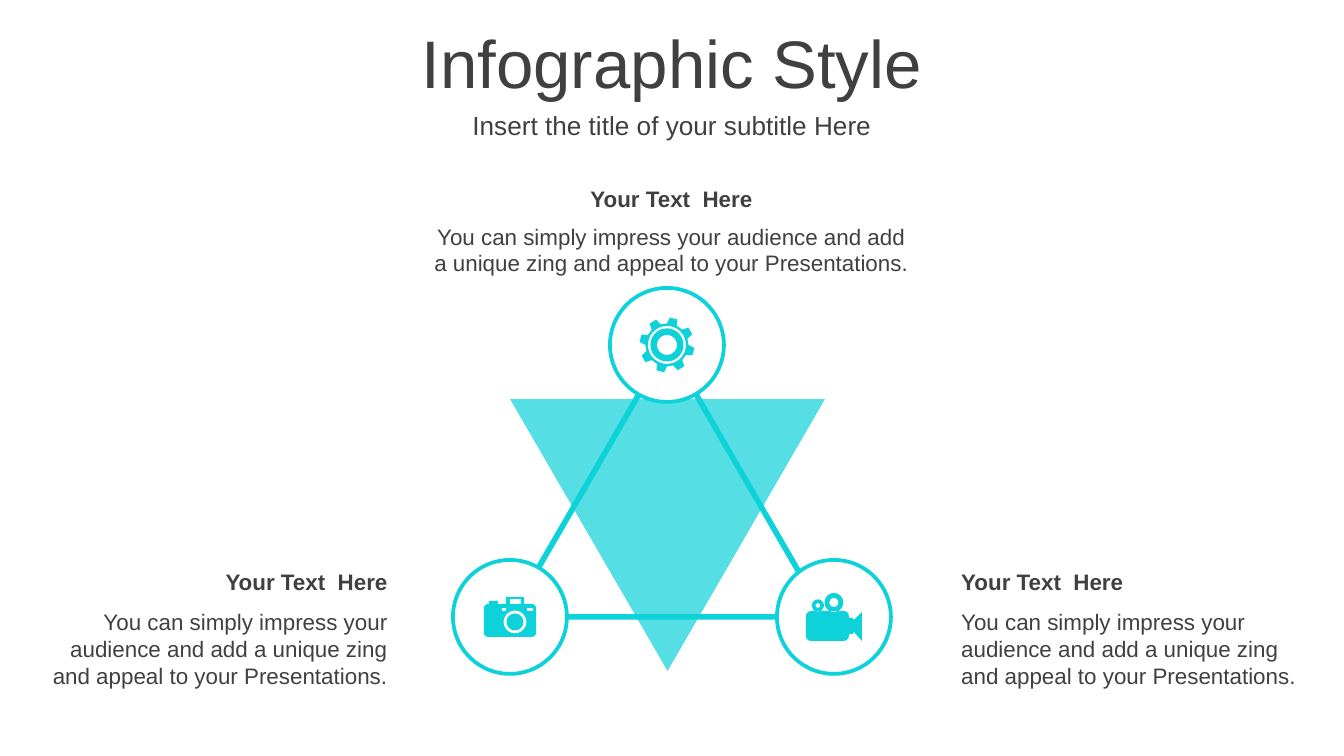
from math import cos, radians, sin

from lxml import etree
from pptx import Presentation
from pptx import util as u
from pptx.dml.color import RGBColor
from pptx.enum import shapes, text
from pptx.oxml.ns import qn

PX = u.Inches(10) / 1344
CYAN = RGBColor(0x0D, 0xD2, 0xD9)
WHITE = RGBColor(0xFF, 0xFF, 0xFF)
GREY = RGBColor(0x40, 0x40, 0x40)

HEADING = "Your Text  Here"
BODY = ("You can simply impress your audience and add a unique zing "
        "and appeal to your Presentations.")
NODE_RADIUS = 57
GEAR, CAMERA, VIDEO = (667, 345), (510, 617), (834, 617)


def px(value):
    return u.Emu(round(value * PX))


def add_text(slide, content, box, size=12, bold=False, align=text.PP_ALIGN.CENTER):
    frame = slide.shapes.add_textbox(*map(px, box)).text_frame
    frame.word_wrap = True
    frame.vertical_anchor = text.MSO_ANCHOR.MIDDLE
    paragraph = frame.paragraphs[0]
    paragraph.alignment = align
    run = paragraph.add_run()
    run.text = content
    run.font.name = "Arial"
    run.font.size = u.Pt(size)
    run.font.bold = bold
    run.font.color.rgb = GREY


def paint(shape, fill=None, line_width=0):
    shape.shadow.inherit = False
    if fill is None:
        shape.fill.background()
    else:
        shape.fill.solid()
        shape.fill.fore_color.rgb = fill
    if line_width:
        shape.line.color.rgb = CYAN
        shape.line.width = u.Pt(line_width)
    else:
        shape.line.fill.background()


def add_preset(slide, kind, box, **style):
    shape = slide.shapes.add_shape(kind, *map(px, box))
    paint(shape, **style)
    return shape


def set_opacity(shape, percent):
    color = shape.fill._xPr.find(qn("a:solidFill"))[0]
    etree.SubElement(color, qn("a:alpha"), val=str(percent * 1000))


def add_icon(slide, center, contours):
    """Draw contours given relative to the center; inner ones cut holes."""
    placed = [[(px(center[0] + x), px(center[1] + y)) for x, y in contour]
              for contour in contours]
    builder = slide.shapes.build_freeform(*placed[0][0])
    for index, contour in enumerate(placed):
        if index:
            builder.move_to(*contour[0])
        builder.add_line_segments(contour[1:], close=True)
    paint(builder.convert_to_shape(), fill=CYAN)


# Contours for the icons
def polar(x, y, radius, angle):
    return x + radius * cos(radians(angle)), y + radius * sin(radians(angle))


def circle(x, y, radius):
    return [polar(x, y, radius, angle) for angle in range(0, 360, 10)]


def rectangle(left, top, right, bottom, radius=0):
    corners = [(right - radius, bottom - radius, 0), (left + radius, bottom - radius, 90),
               (left + radius, top + radius, 180), (right - radius, top + radius, 270)]
    return [polar(x, y, radius, start + turn)
            for x, y, start in corners for turn in (0, 30, 60, 90)]


def gear():
    teeth = [polar(0, 0, radius, -76 + 45 * tooth + offset)
             for tooth in range(8)
             for radius, offset in ((21.5, -14), (27.5, -8), (27.5, 8), (21.5, 14))]
    return [teeth] + [circle(0, 0, radius) for radius in (19, 16.5, 10)]


def camera():
    return [
        rectangle(-26, -13, 26, 20, 4),
        [(-21, -13), (-21, -16), (-12, -16), (-12, -13)],
        [(-4, -13), (-4, -20), (14, -20), (14, -13)],
        rectangle(0, -18, 11, -13),
        rectangle(-8, -9, -4, -6),
        rectangle(17, -9, 23, -6),
        circle(5, 5, 11.4),
        circle(5, 5, 8.4),
    ]


def video():
    lens = [(15, 1), (19, 1), (20, 3), (28, -5), (28, 24), (20, 15), (19, 17), (15, 17)]
    return [
        rectangle(-28, -6, 15, 24, 5),
        lens,
        circle(0, -14.5, 9.4),
        circle(0, -14.5, 4.5),
        circle(-16, -11.5, 6),
        circle(-16, -11.5, 2.3),
    ]


def main():
    presentation = Presentation()
    presentation.slide_width, presentation.slide_height = px(1344), px(756)
    slide = presentation.slides.add_slide(presentation.slide_layouts[6])

    # Title and subtitle
    add_text(slide, "Infographic Style", (0, 19, 1344, 85), size=36)
    add_text(slide, "Insert the title of your subtitle Here", (0, 104, 1344, 42), size=14)

    # Crossed triangles
    triangle = shapes.MSO_SHAPE.ISOSCELES_TRIANGLE
    filled = add_preset(slide, triangle, (510, 399, 315, 272), fill=CYAN)
    filled.rotation = 180
    set_opacity(filled, 70)
    add_preset(slide, triangle, (510, 345, 315, 272), line_width=3)

    # Corner nodes with icons
    for center, contours in ((GEAR, gear()), (CAMERA, camera()), (VIDEO, video())):
        x, y = center
        add_preset(slide, shapes.MSO_SHAPE.OVAL,
                   (x - NODE_RADIUS, y - NODE_RADIUS, 2 * NODE_RADIUS, 2 * NODE_RADIUS),
                   fill=WHITE, line_width=2)
        add_icon(slide, center, contours)

    # Captions: left, width, heading top, body top, body height, alignment
    for left, width, heading_top, body_top, height, align in (
            (38, 363, 562, 601, 95, text.PP_ALIGN.RIGHT),
            (948, 363, 562, 601, 95, text.PP_ALIGN.LEFT),
            (420, 503, 179, 216, 67, text.PP_ALIGN.CENTER)):
        add_text(slide, BODY, (left, body_top, width, height), align=align)
        add_text(slide, HEADING, (left, heading_top, width, 40), bold=True, align=align)

    presentation.save("out.pptx")


if __name__ == "__main__":
    main()
